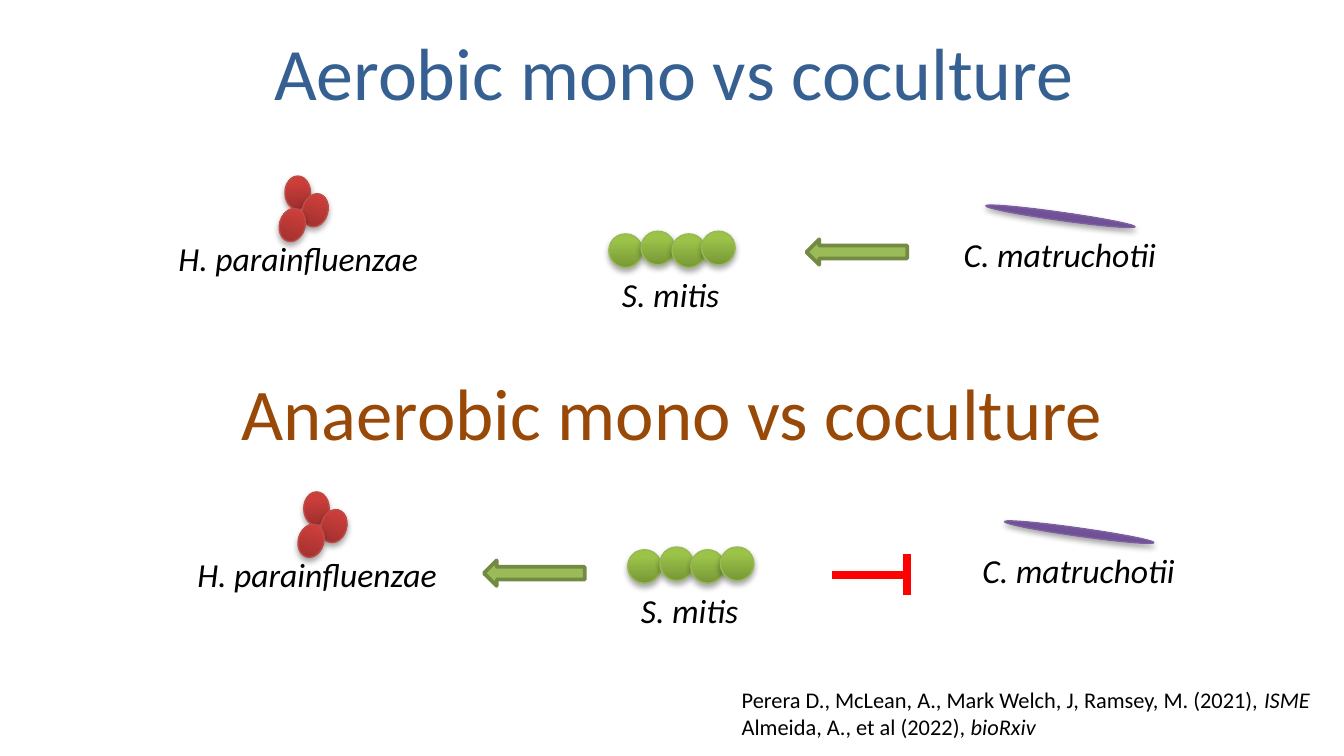
"""Build a slide comparing aerobic and anaerobic mono- and coculture interactions."""
from lxml import etree
from pptx import Presentation
from pptx.dml.color import RGBColor
from pptx.enum.shapes import MSO_CONNECTOR, MSO_SHAPE
from pptx.enum.text import MSO_ANCHOR, MSO_AUTO_SIZE, PP_ALIGN
from pptx.oxml import parse_xml
from pptx.oxml.ns import nsdecls, qn
from pptx.util import Inches, Pt

OVAL, ARROW = MSO_SHAPE.OVAL, MSO_SHAPE.RIGHT_ARROW
STRAIGHT = MSO_CONNECTOR.STRAIGHT
LEFT, CENTER = PP_ALIGN.LEFT, PP_ALIGN.CENTER
MIDDLE = MSO_ANCHOR.MIDDLE
GROW, FIXED = MSO_AUTO_SIZE.SHAPE_TO_FIT_TEXT, MSO_AUTO_SIZE.NONE

COLORS = {
    "aerobic": "376092", "anaerobic": "984807", "text": "000000",
    "arrow": "9BBB59", "arrow_line": "738A42", "inhibit": "FF0000",
}
CELLS = {
    "mitis": ("779737", "9BC348", "98B955"),
    "matruchotii": ("5F4480", "7B58A6", "7D60A0"),
    "parainfluenzae": ("9C2F2D", "CB3E3A", "BF4C48"),
}
SHADOW = (
    f'<a:outerShdw {nsdecls("a")} blurRad="40000" dist="23000" dir="5400000" rotWithShape="0">'
    '<a:srgbClr val="000000"><a:alpha val="35000"/></a:srgbClr></a:outerShdw>'
)


def add_cell(shapes, kind, x, y, w, h, rotation=0):
    dark, light, edge = CELLS[kind]
    sp = shapes.add_shape(OVAL, Inches(x), Inches(y), Inches(w), Inches(h))
    sp.rotation = rotation
    sp.fill.gradient()
    sp.fill.gradient_angle = 90
    for stop, position, color in zip(sp.fill.gradient_stops, (0, 0.8), (dark, light)):
        stop.position = position
        stop.color.rgb = RGBColor.from_string(color)
    sp.line.color.rgb = RGBColor.from_string(edge)
    sp.line.width = Pt(0.75)
    sp.shadow.inherit = False
    sp._element.spPr.find(qn("a:effectLst")).append(parse_xml(SHADOW))


def add_run(p, text, size, color, italic=False):
    r = p.add_run()
    r.text = text
    r.font.name = "Calibri"
    r.font.size = Pt(size)
    r.font.italic = italic
    r.font.color.rgb = RGBColor.from_string(COLORS[color])


prs = Presentation()
prs.slide_width = Inches(10)
prs.slide_height = Inches(10 * 9 / 16)
s = prs.slides.add_slide(prs.slide_layouts[5])

title = s.shapes.title
title.left, title.top, title.width, title.height = map(Inches, (1.64, 0.06, 6.75, 0.94))
subtitle = s.shapes.add_textbox(Inches(1.3), Inches(2.59), Inches(7.4), Inches(0.94))
for sp, text, size, color in (
    (title, "Aerobic mono vs coculture", 39.6, "aerobic"),
    (subtitle, "Anaerobic mono vs coculture", 39, "anaerobic"),
):
    tf = sp.text_frame
    tf.word_wrap = True
    tf.auto_size = FIXED
    tf.vertical_anchor = MIDDLE
    p = tf.paragraphs[0]
    p.alignment = CENTER
    add_run(p, text, size, color)

for dx, dy in ((0, 0), (0.14, 2.35)):
    chain = s.shapes.add_group_shape().shapes
    for x, y in ((4.53, 1.74), (4.77, 1.72), (5, 1.74), (5.22, 1.72)):
        add_cell(chain, "mitis", x + dx, y + dy, 0.25, 0.25)
    add_cell(s.shapes, "matruchotii", 7.33 + dx, 1.58 + dy, 1.12, 0.06, 8)
    for x, y, rotation in ((2.12, 1.31, 0), (2.25, 1.44, 15.8), (2.08, 1.55, 15.8)):
        add_cell(s.shapes, "parainfluenzae", x + dx, y + dy, 0.19, 0.25, rotation)
    for shapes, text, x, y, w, align in (
        (chain, "S. mitis", 4.53, 1.99, 0.93, LEFT),
        (s.shapes, "C. matruchotii", 7.06, 1.69, 1.65, CENTER),
        (s.shapes, "H. parainfluenzae", 1.22, 1.72, 2, CENTER),
    ):
        label = shapes.add_textbox(Inches(x + dx), Inches(y + dy), Inches(w), Inches(0.4))
        tf = label.text_frame
        tf.word_wrap = False
        tf.auto_size = GROW
        p = tf.paragraphs[0]
        p.alignment = align
        add_run(p, text, 18, "text", True)

for x, y in ((6, 1.78), (3.6, 4.17)):
    arrow = s.shapes.add_shape(ARROW, Inches(x), Inches(y), Inches(0.75), Inches(0.19))
    arrow.rotation = 180
    arrow.shadow.inherit = False
    arrow.fill.solid()
    arrow.fill.fore_color.rgb = RGBColor.from_string(COLORS["arrow"])
    arrow.line.color.rgb = RGBColor.from_string(COLORS["arrow_line"])
    arrow.line.width = Pt(2)

inhibition = s.shapes.add_group_shape().shapes
for ends in ((6.75, 4.28, 6.19, 4.28), (6.75, 4.43, 6.75, 4.12)):
    bar = inhibition.add_connector(STRAIGHT, *map(Inches, ends))
    bar.line.color.rgb = RGBColor.from_string(COLORS["inhibit"])
    bar.line.width = Pt(4.5)
    etree.SubElement(bar._element.spPr, qn("a:effectLst"))

references = s.shapes.add_textbox(Inches(5.42), Inches(5.06), Inches(4.52), Inches(0.5))
tf = references.text_frame
tf.word_wrap = True
tf.auto_size = GROW
p = tf.paragraphs[0]
add_run(p, "Perera D., McLean, A., Mark Welch, J, Ramsey, M. (2021), ", 12, "text")
add_run(p, "ISME", 12, "text", True)
p = tf.add_paragraph()
add_run(p, "Almeida, A., et al (2022), ", 12, "text")
add_run(p, "bioRxiv", 12, "text", True)

prs.save("out.pptx")
